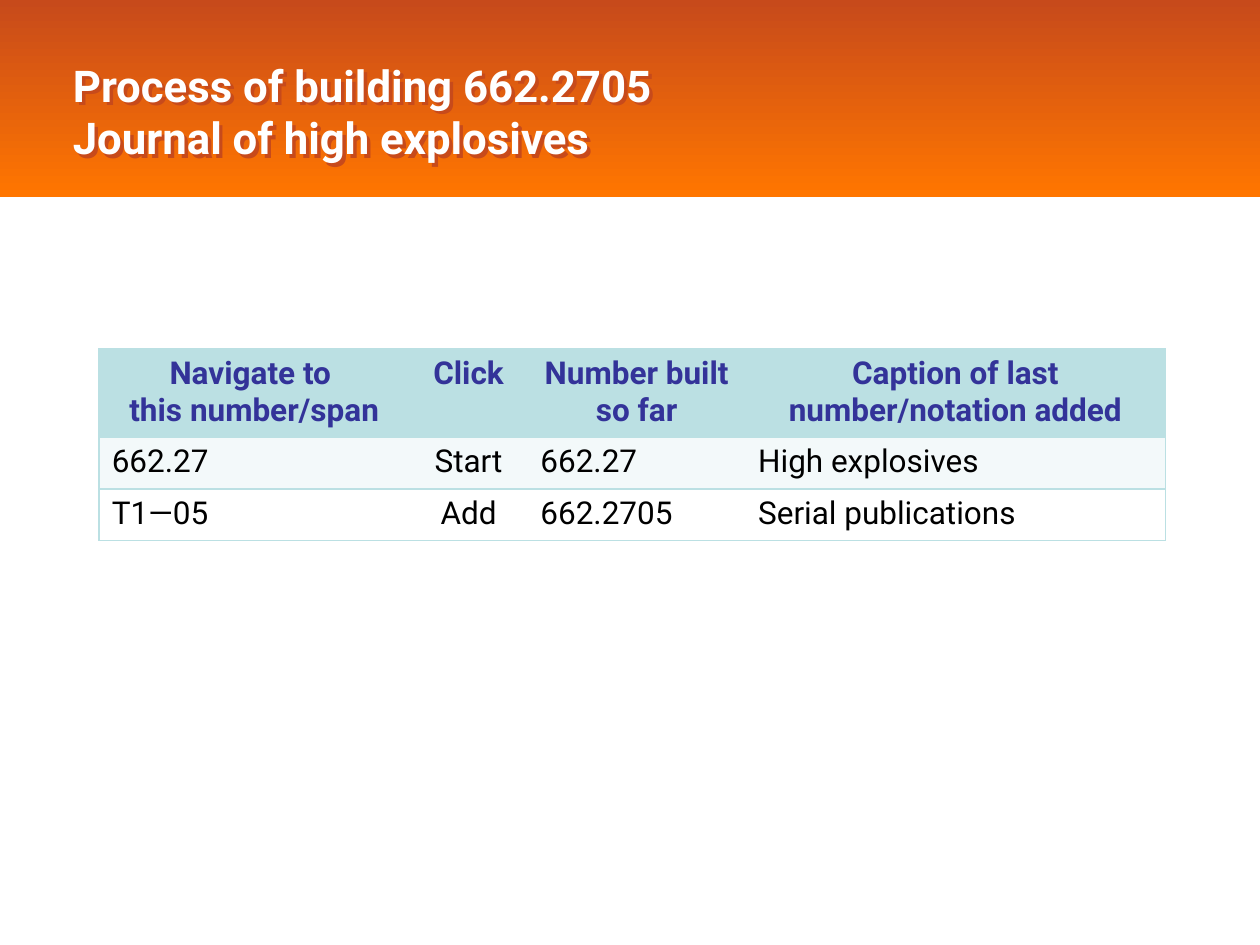
from lxml import etree
from pptx import Presentation
from pptx import util as u
from pptx.dml.color import RGBColor
from pptx.enum import shapes, text
from pptx.oxml.ns import qn

RUST = RGBColor(0xC7, 0x4A, 0x1B)
ORANGE = RGBColor(0xFF, 0x76, 0x00)
WHITE = RGBColor(0xFF, 0xFF, 0xFF)
BLACK = RGBColor(0x00, 0x00, 0x00)
INDIGO = RGBColor(0x33, 0x33, 0x99)
AQUA = RGBColor(0xBB, 0xE0, 0xE3)
PALE_AQUA = RGBColor(0xF3, 0xF9, 0xFA)

HEADINGS = ["Navigate to \nthis number/span", "Click", "Number built so far",
            "Caption of last number/notation added"]
STEPS = [["662.27", "Start", "662.27", "High explosives"],
         ["T1—05", "Add", "662.2705", "Serial publications"]]
COLUMN_WIDTHS = [6.25, 2.39, 4.39, 8.46]
ROW_HEIGHTS = [1.75, 1.04, 1.04]
CLICK_COLUMN = 1


class SlideBuilder:
    font = "Roboto"

    def __init__(self, slide):
        self.slide = slide

    def style(self, frame, size, color, bold, align):
        for paragraph in frame.paragraphs:
            paragraph.alignment = align
            for run in paragraph.runs:
                run.font.name = self.font
                run.font.size = u.Pt(size)
                run.font.bold = bold
                run.font.color.rgb = color

    def band(self, left, top, width, height, upper, lower):
        band = self.slide.shapes.add_shape(
            shapes.MSO_SHAPE.RECTANGLE, u.Cm(left), u.Cm(top), u.Cm(width), u.Cm(height))
        band.shadow.inherit = False
        band.line.fill.background()
        band.fill.gradient()
        band.fill.gradient_angle = 270
        for stop, color, position in zip(band.fill.gradient_stops, (upper, lower), (0, 1)):
            stop.color.rgb = color
            stop.position = position

    def title(self, left, top, width, height, wording, shadow_color):
        title = self.slide.shapes.add_textbox(
            u.Cm(left), u.Cm(top), u.Cm(width), u.Cm(height))
        frame = title.text_frame
        frame.word_wrap = True
        frame.vertical_anchor = text.MSO_ANCHOR.MIDDLE
        frame.text = wording
        self.style(frame, 25, WHITE, True, text.PP_ALIGN.LEFT)
        effects = etree.SubElement(title._element.spPr, qn("a:effectLst"))
        shadow = etree.SubElement(effects, qn("a:outerShdw"), dist="36000",
                                  dir="2700000", algn="ctr", rotWithShape="0")
        etree.SubElement(shadow, qn("a:srgbClr"), val=str(shadow_color))

    def borders(self, cell, sides):
        properties = cell._tc.get_or_add_tcPr()
        for side in "LRTB":
            line = etree.SubElement(properties, qn(f"a:ln{side}"), w="12700")
            if side in sides:
                fill = etree.SubElement(line, qn("a:solidFill"))
                etree.SubElement(fill, qn("a:srgbClr"), val=str(AQUA))
            else:
                etree.SubElement(line, qn("a:noFill"))

    def table(self, left, top, rows, widths, heights, fills):
        table = self.slide.shapes.add_table(
            len(rows), len(widths), u.Cm(left), u.Cm(top),
            u.Cm(sum(widths)), u.Cm(sum(heights))).table
        table.first_row = False
        table.horz_banding = False
        for column, width in zip(table.columns, widths):
            column.width = u.Cm(width)
        for r, wordings in enumerate(rows):
            table.rows[r].height = u.Cm(heights[r])
            heading = r == 0
            for c, wording in enumerate(wordings):
                cell = table.cell(r, c)
                left_edge = "L" if c == 0 else ""
                right_edge = "R" if c == len(widths) - 1 else ""
                self.borders(cell, "TB" + left_edge + right_edge)
                cell.fill.solid()
                cell.fill.fore_color.rgb = fills[r]
                cell.text_frame.text = wording
                centred = heading or c == CLICK_COLUMN
                self.style(cell.text_frame, 18, INDIGO if heading else BLACK, heading,
                           text.PP_ALIGN.CENTER if centred else text.PP_ALIGN.LEFT)


def main():
    deck = Presentation()
    deck.slide_width = u.Cm(25.4)
    deck.slide_height = u.Cm(19.05)
    builder = SlideBuilder(deck.slides.add_slide(deck.slide_layouts[6]))
    builder.band(0, 0, 25.4, 3.98, RUST, ORANGE)
    builder.title(1.22, 0.46, 19.4, 3.56,
                  "Process of building 662.2705\vJournal of high explosives", RUST)
    builder.table(2, 7.04, [HEADINGS] + STEPS, COLUMN_WIDTHS, ROW_HEIGHTS,
                  [AQUA, PALE_AQUA, WHITE])
    deck.save("out.pptx")


if __name__ == "__main__":
    main()
